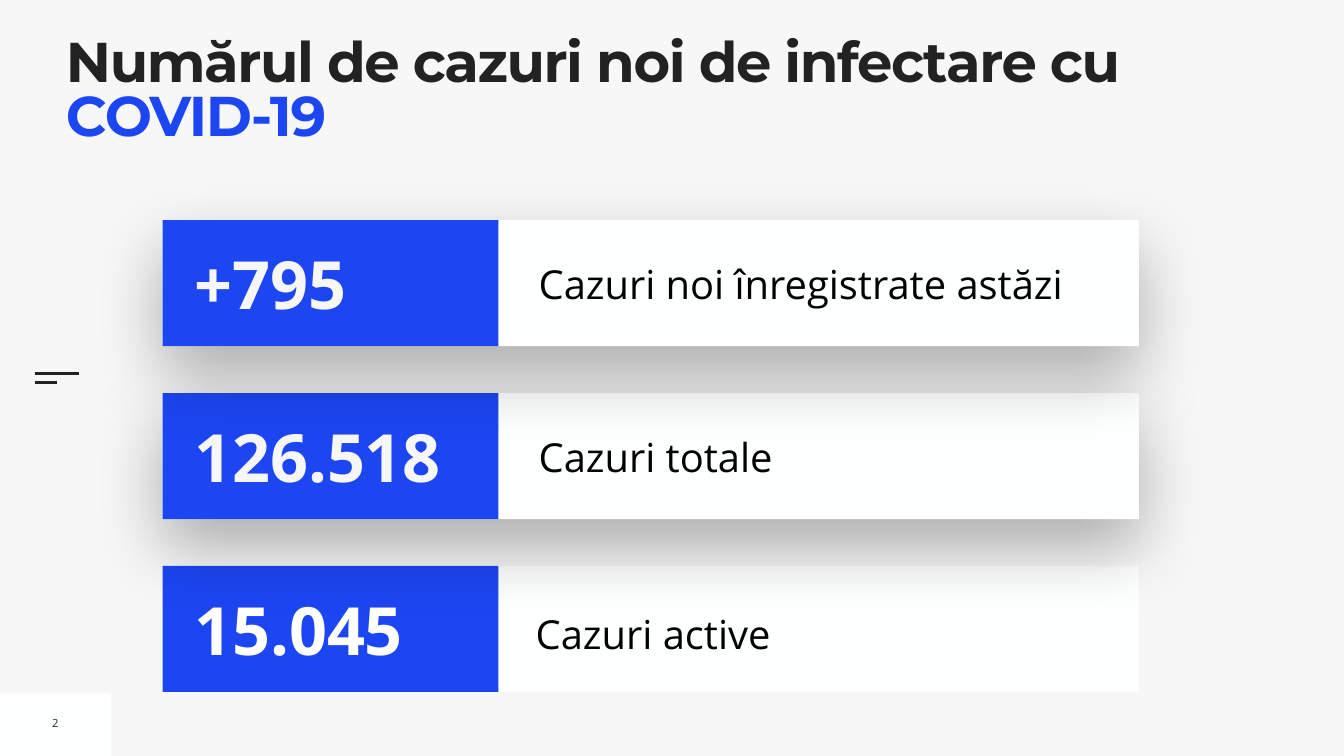
import pptx
import pptx.dml.color
import pptx.enum.shapes
import pptx.enum.text
import pptx.oxml
import pptx.oxml.ns
import pptx.util
from lxml import etree

RGBColor = pptx.dml.color.RGBColor
BACKGROUND = RGBColor(0xF7, 0xF7, 0xF7)
WHITE = RGBColor(0xFF, 0xFF, 0xFF)
PANEL = RGBColor(0xFE, 0xFF, 0xFF)
BLUE = RGBColor(0x1D, 0x46, 0xF3)
DARK = RGBColor(0x22, 0x22, 0x22)
BLACK = RGBColor(0x00, 0x00, 0x00)

# Content
TITLE = [("Numărul de cazuri noi de infectare cu ", DARK), ("COVID-19", BLUE)]
PAGE_NUMBER = "2"
STATS = [
    {"figure": "+795", "label": "Cazuri noi înregistrate astăzi", "color": BACKGROUND},
    {"figure": "126.518", "label": "Cazuri totale", "color": BACKGROUND},
    {"figure": "15.045", "label": "Cazuri active", "color": WHITE},
]

# Grid, in inches
SLIDE_W, SLIDE_H = 26.67, 15
ROW_LEFT, ROW_TOP, ROW_PITCH = 3.23, 4.37, 3.43
ROW_W, ROW_H, FIGURE_W = 19.37, 2.5, 6.66
PAGE_W, PAGE_H = 2.2, 1.24
DASH_LEFT, DASHES = 0.69, [(7.41, 0.88), (7.59, 0.44)]

inches = pptx.util.Inches


def add_panel(slide, left, top, width, height, color):
    panel = slide.shapes.add_shape(
        pptx.enum.shapes.MSO_SHAPE.RECTANGLE,
        inches(left), inches(top), inches(width), inches(height))
    panel.shadow.inherit = False
    panel.fill.solid()
    panel.fill.fore_color.rgb = color
    panel.line.fill.background()
    return panel


def cast_shadow(panel):
    effects = panel._element.spPr.find(pptx.oxml.ns.qn("a:effectLst"))
    effects.append(pptx.oxml.parse_xml(
        f'<a:outerShdw {pptx.oxml.ns.nsdecls("a")} blurRad="{pptx.util.Pt(100)}" '
        f'dist="{pptx.util.Pt(40)}" dir="5400000" rotWithShape="0">'
        '<a:srgbClr val="000000"><a:alpha val="30000"/></a:srgbClr></a:outerShdw>'))


def add_text(slide, left, top, width, height, runs, size, font="Open Sans",
             bold=False, inset=0.1, wrap=True,
             anchor=pptx.enum.text.MSO_ANCHOR.MIDDLE):
    box = slide.shapes.add_textbox(
        inches(left), inches(top), inches(width), inches(height))
    frame = box.text_frame
    frame.word_wrap = wrap
    frame.vertical_anchor = anchor
    frame.margin_left = frame.margin_right = inches(inset)
    frame.margin_top = frame.margin_bottom = inches(inset)
    paragraph = frame.paragraphs[0]
    paragraph.font.size = pptx.util.Pt(size)
    paragraph.font.name = font
    paragraph.font.bold = bold
    for text, color in runs:
        run = paragraph.add_run()
        run.text = text
        run.font.color.rgb = color
    return paragraph


prs = pptx.Presentation()
prs.slide_width, prs.slide_height = inches(SLIDE_W), inches(SLIDE_H)
slide = prs.slides.add_slide(prs.slide_layouts[6])
slide.background.fill.solid()
slide.background.fill.fore_color.rgb = BACKGROUND

# Page number in the corner
add_panel(slide, 0, SLIDE_H - PAGE_H, PAGE_W, PAGE_H, PANEL)
number = add_text(slide, 0.93, 14.09, 0.34, 0.51, [(PAGE_NUMBER, DARK)], 16, wrap=False)
number.alignment = pptx.enum.text.PP_ALIGN.CENTER

# Two dashes at the left edge
for y, length in DASHES:
    dash = slide.shapes.add_connector(
        pptx.enum.shapes.MSO_CONNECTOR.STRAIGHT,
        inches(DASH_LEFT), inches(y), inches(DASH_LEFT + length), inches(y))
    dash.line.color.rgb = DARK
    dash.line.width = pptx.util.Pt(3)
    etree.SubElement(dash._element.spPr, pptx.oxml.ns.qn("a:effectLst"))

# Title
title = add_text(slide, 1.31, 0.78, 23.94, 1.58, TITLE, 80, "Montserrat", True,
                 inset=0, anchor=pptx.enum.text.MSO_ANCHOR.TOP)
title.line_spacing = 0.8
for run in title.runs:
    run.font._element.set("spc", "-200")

# Rows from the bottom up, so that each shadow falls on the row below
for row, stat in reversed(list(enumerate(STATS))):
    top = ROW_TOP + row * ROW_PITCH
    last = row == len(STATS) - 1
    band = add_panel(slide, ROW_LEFT, top, ROW_W, ROW_H, PANEL)
    label_runs = [(stat["label"], BLACK)]
    if last:
        label = add_text(slide, 10.63, top + 0.57, 11.58, 1.25, label_runs, 57, inset=0)
        label.line_spacing = 1.3
        label.space_before = pptx.util.Pt(20)
    else:
        cast_shadow(band)
        add_text(slide, 10.59, top + 0.67, 11.76, 1.16, label_runs, 57)
    add_panel(slide, ROW_LEFT, top, FIGURE_W, ROW_H, BLUE)
    add_text(slide, ROW_LEFT + 0.53, top + 0.35, 6.03, 1.8,
             [(stat["figure"], stat["color"])], 95, bold=True)

prs.save("out.pptx")
